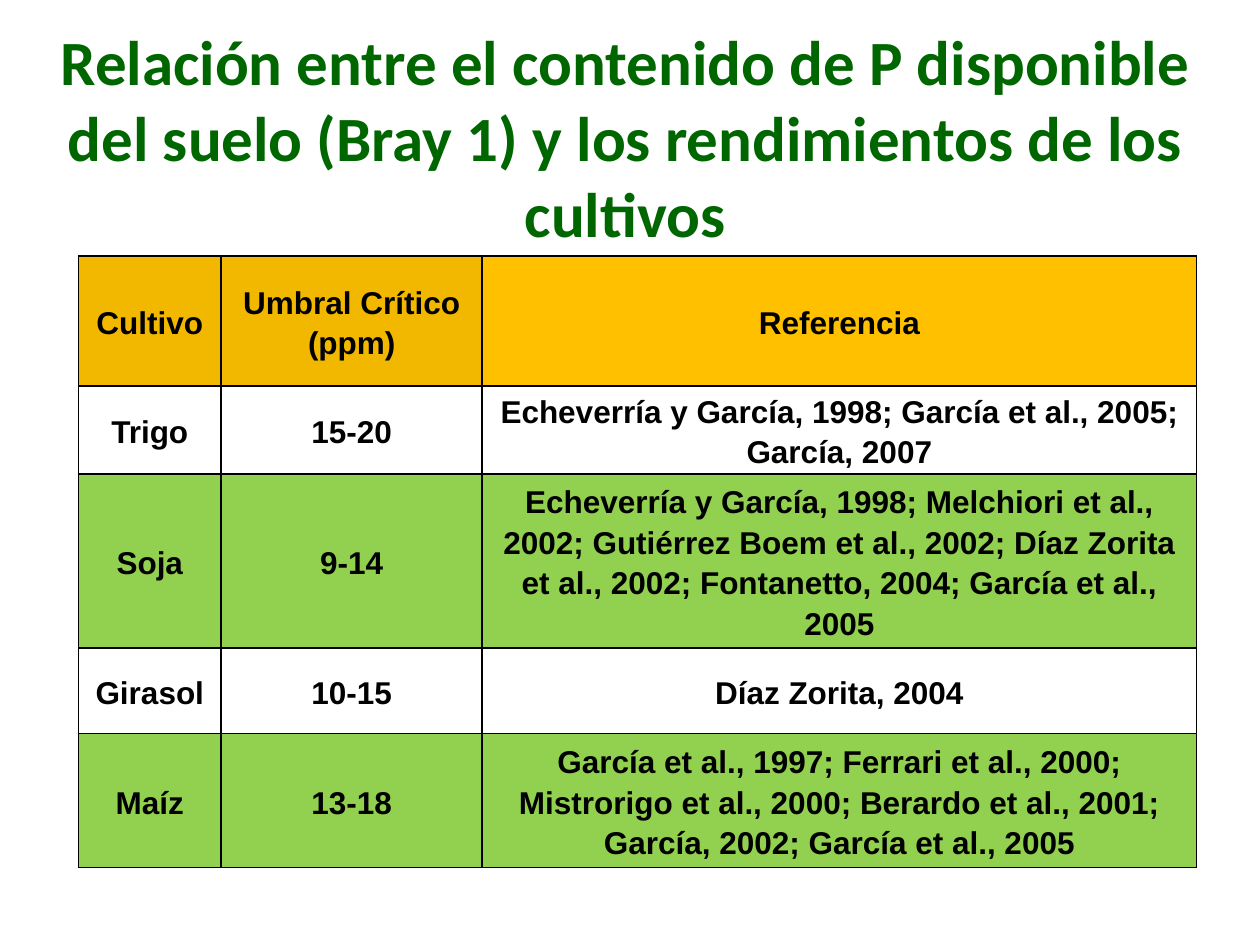
"""Build a slide with a table of critical soil phosphorus thresholds by crop."""
from lxml.etree import SubElement
from pptx import Presentation
from pptx.dml.color import RGBColor
from pptx.enum.text import MSO_ANCHOR as ANCHOR, MSO_AUTO_SIZE as AUTO_SIZE, PP_ALIGN as ALIGN
from pptx.oxml.ns import qn
from pptx.util import Cm, Pt

TITLE = ("Relación entre el contenido de P disponible del suelo (Bray 1) "
         "y los rendimientos de los cultivos")
ROWS = [
    ("Cultivo", "Umbral Crítico\n(ppm)", "Referencia"),
    ("Trigo", "15-20", "Echeverría y García, 1998; García et al., 2005; García, 2007"),
    ("Soja", "9-14", "Echeverría y García, 1998; Melchiori et al., 2002; "
     "Gutiérrez Boem et al., 2002; Díaz Zorita et al., 2002; "
     "Fontanetto, 2004; García et al., 2005"),
    ("Girasol", "10-15", "Díaz Zorita, 2004"),
    ("Maíz", "13-18", "García et al., 1997; Ferrari et al., 2000; "
     "Mistrorigo et al., 2000; Berardo et al., 2001; García, 2002; García et al., 2005"),
]
COL_WIDTHS = (2.88, 5.26, 14.4)
ROW_HEIGHTS = (2.62, 1.78, 3.5, 1.73, 2.7)

BLACK = RGBColor(0x00, 0x00, 0x00)
DARK_GREEN = RGBColor(0x00, 0x66, 0x00)
LIGHT_GREEN = RGBColor(0x92, 0xD0, 0x50)
GOLD = RGBColor(0xF2, 0xB8, 0x00)
AMBER = RGBColor(0xFF, 0xC0, 0x00)


def format_text(tf, font, size, color, spacing=None):
    for p in tf.paragraphs:
        p.alignment = ALIGN.CENTER
        p.line_spacing = spacing
        for r in p.runs:
            r.font.name, r.font.size, r.font.bold = font, Pt(size), True
            r.font.color.rgb = color


def add_borders(cell):
    tc_pr = cell._tc.get_or_add_tcPr()
    for side in ("a:lnL", "a:lnR", "a:lnT", "a:lnB"):
        ln = SubElement(tc_pr, qn(side), w=str(Pt(1)))
        fill = SubElement(ln, qn("a:solidFill"))
        SubElement(fill, qn("a:srgbClr"), val=str(BLACK))


def fill_color(row, col):
    if row == 0:
        return AMBER if col == 2 else GOLD
    return LIGHT_GREEN if row % 2 == 0 else None


def add_title(s):
    sp = s.shapes.title
    sp.left, sp.top, sp.width, sp.height = Cm(0.3), Cm(2.77), Cm(24.61), Cm(2.39)
    tf = sp.text_frame
    tf.text = TITLE
    tf.word_wrap = True
    tf.auto_size = AUTO_SIZE.NONE
    tf.vertical_anchor = ANCHOR.BOTTOM
    format_text(tf, "Calibri", 36, DARK_GREEN)


def add_crop_table(s):
    table = s.shapes.add_table(len(ROWS), len(COL_WIDTHS), Cm(1.58), Cm(5.16),
                               Cm(sum(COL_WIDTHS)), Cm(sum(ROW_HEIGHTS))).table
    table.first_row = table.horz_banding = False
    for col, width in zip(table.columns, COL_WIDTHS):
        col.width = Cm(width)
    for i, (values, height) in enumerate(zip(ROWS, ROW_HEIGHTS)):
        table.rows[i].height = Cm(height)
        for j, value in enumerate(values):
            cell = table.cell(i, j)
            cell.text_frame.text = value
            cell.vertical_anchor = ANCHOR.MIDDLE
            cell.margin_left = cell.margin_right = Cm(0.18)
            cell.margin_top = cell.margin_bottom = 0
            format_text(cell.text_frame, "Arial", 18, BLACK, 1.15)
            add_borders(cell)
            color = fill_color(i, j)
            if color is None:
                cell.fill.background()
            else:
                cell.fill.solid()
                cell.fill.fore_color.rgb = color


def main():
    prs = Presentation()
    prs.slide_width, prs.slide_height = Cm(25.4), Cm(19.05)
    s = prs.slides.add_slide(prs.slide_layouts[5])
    add_title(s)
    add_crop_table(s)
    prs.save("out.pptx")


if __name__ == "__main__":
    main()
